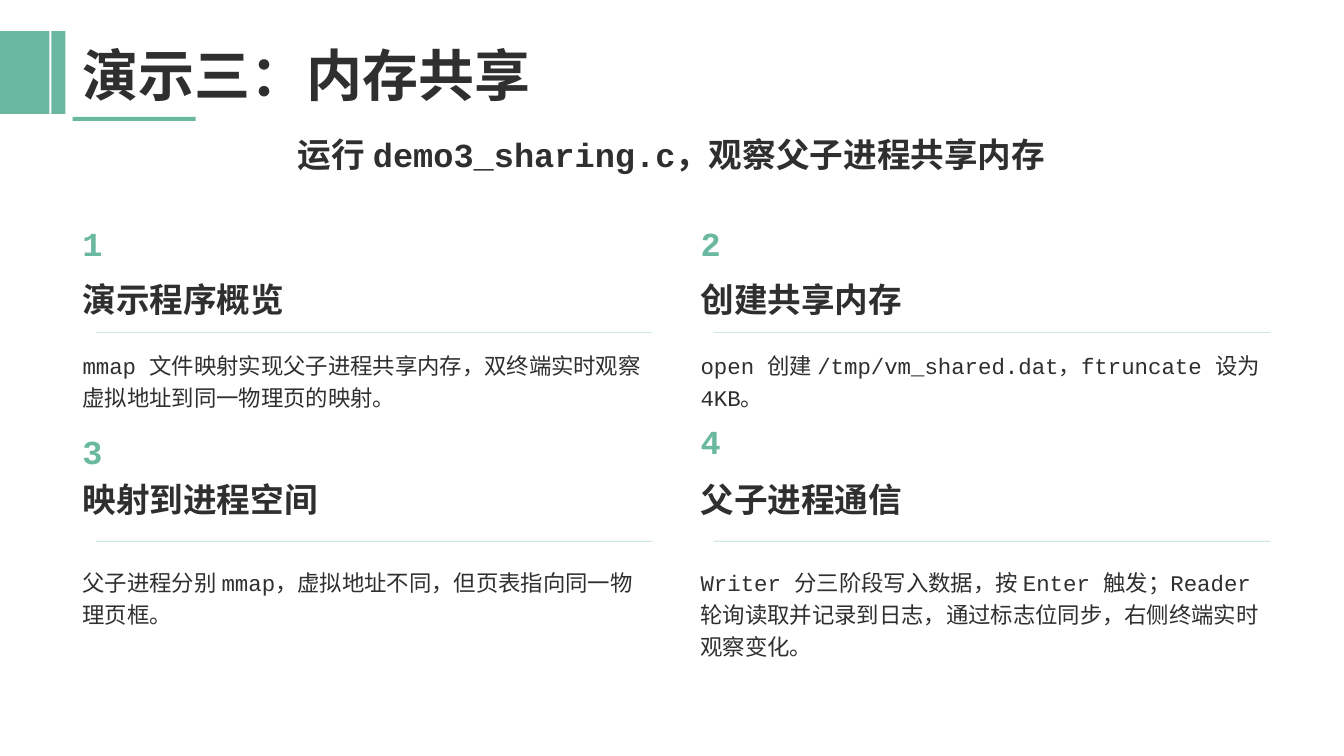
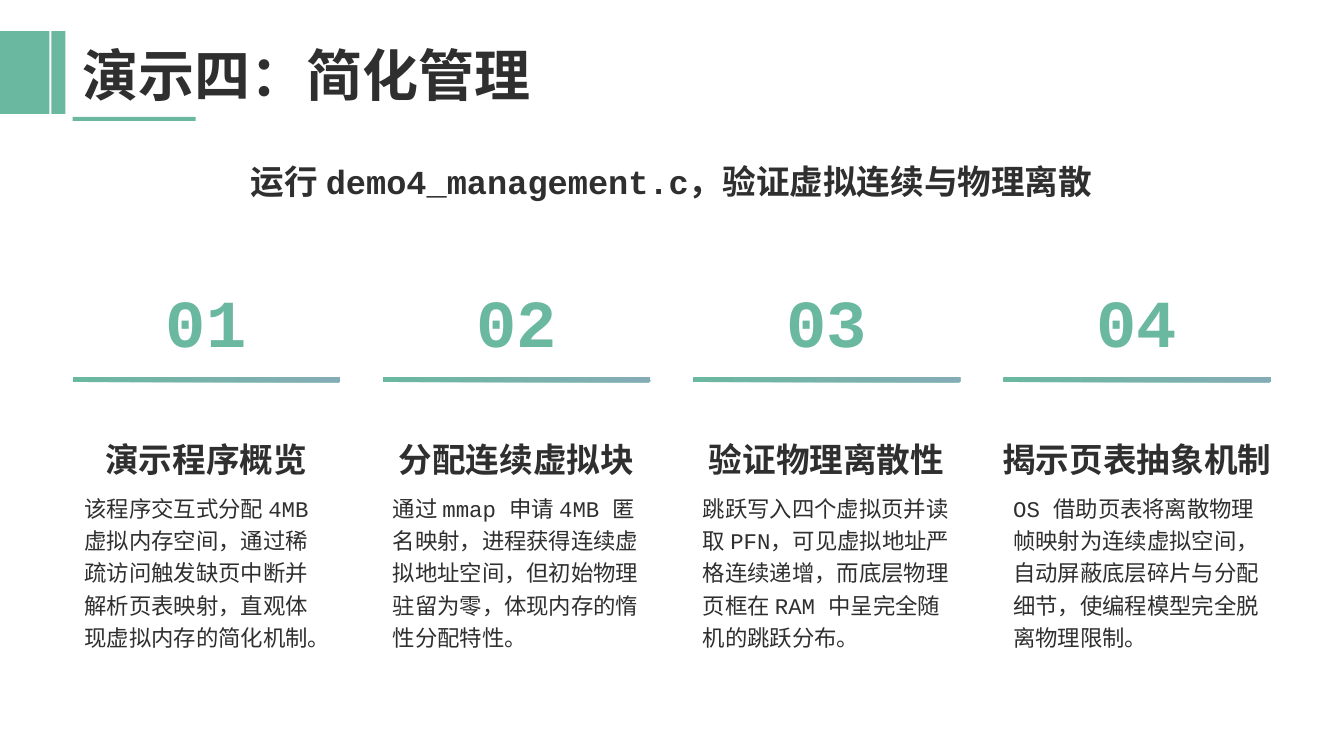
from lxml import etree
from pptx import Presentation
from pptx.dml.color import RGBColor
from pptx.enum.lang import MSO_LANGUAGE_ID
from pptx.enum.shapes import MSO_CONNECTOR, MSO_SHAPE
from pptx.enum.text import MSO_ANCHOR, MSO_AUTO_SIZE, PP_ALIGN
from pptx.oxml.ns import qn
from pptx.util import Inches, Pt

COLORS = {"green": "6BB8A0", "blue": "84ACB6", "ink": "2F2F2F"}
FONT = "Courier New"
MARGIN, CONTENT_WIDTH = 0.72, 11.88

ACCENTS = [  # left, top, width, height
    (MARGIN, 1.16, 1.22, 0.04),
    (0, 0.31, 0.49, 0.82),
    (0.51, 0.31, 0.14, 0.82),
]

SHARING = {
    "title": "演示三：内存共享",
    "subtitle": "运行 demo3_sharing.c，观察父子进程共享内存",
    "subtitle_height": 0.57,
    "rows": [
        {
            "heading_top": 2.67, "rule_top": 3.3, "body_top": 3.39,
            "steps": [  # number, number top, heading, body
                ("1", 2.09, "演示程序概览",
                 "mmap 文件映射实现父子进程共享内存，双终端实时观察虚拟地址到同一物理页的映射。"),
                ("2", 2.09, "创建共享内存",
                 "open 创建 /tmp/vm_shared.dat，ftruncate 设为 4KB。"),
            ],
        },
        {
            "heading_top": 4.65, "rule_top": 5.37, "body_top": 5.54,
            "steps": [
                ("3", 4.15, "映射到进程空间",
                 "父子进程分别 mmap，虚拟地址不同，但页表指向同一物理页框。"),
                ("4", 4.06, "父子进程通信",
                 "Writer 分三阶段写入数据，按 Enter 触发；Reader 轮询读取并记录到日志，"
                 "通过标志位同步，右侧终端实时观察变化。"),
            ],
        },
    ],
}

MANAGEMENT = {
    "title": "演示四：简化管理",
    "subtitle": "运行 demo4_management.c，验证虚拟连续与物理离散",
    "subtitle_height": 1.12,
    "steps": [  # heading, body indent, body
        ("演示程序概览", 0.02,
         "该程序交互式分配 4MB 虚拟内存空间，通过稀疏访问触发缺页中断并解析页表映射，"
         "直观体现虚拟内存的简化机制。"),
        ("分配连续虚拟块", 0,
         "通过 mmap 申请 4MB 匿名映射，进程获得连续虚拟地址空间，但初始物理驻留为零，"
         "体现内存的惰性分配特性。"),
        ("验证物理离散性", 0,
         "跳跃写入四个虚拟页并读取 PFN，可见虚拟地址严格连续递增，"
         "而底层物理页框在 RAM 中呈完全随机的跳跃分布。"),
        ("揭示页表抽象机制", 0,
         "OS 借助页表将离散物理帧映射为连续虚拟空间，自动屏蔽底层碎片与分配细节，"
         "使编程模型完全脱离物理限制。"),
    ],
}


def rgb(name):
    return RGBColor.from_string(COLORS[name])


def paint_gradient(fill):
    fill.gradient()
    fill.gradient_angle = 315
    for stop, name in zip(fill.gradient_stops, ("green", "blue")):
        stop.color.rgb = rgb(name)


def write(shape, text, size, color="ink", bold=True, align=PP_ALIGN.LEFT,
          anchor=MSO_ANCHOR.BOTTOM, spacing=1.0):
    frame = shape.text_frame
    frame.text = text
    frame.word_wrap = True
    frame.auto_size = MSO_AUTO_SIZE.NONE
    frame.vertical_anchor = anchor
    paragraph = frame.paragraphs[0]
    paragraph.alignment = align
    paragraph.line_spacing = spacing
    font = paragraph.font
    font.name, font.size, font.bold = FONT, Pt(size), bold
    font.language_id = MSO_LANGUAGE_ID.SIMPLIFIED_CHINESE
    if color == "gradient":
        paint_gradient(font.fill)
    else:
        font.color.rgb = rgb(color)


def add_text(slide, left, top, width, height, text, size, **style):
    box = slide.shapes.add_textbox(*map(Inches, (left, top, width, height)))
    write(box, text, size, **style)


def add_body(slide, left, top, width, height, text):
    add_text(slide, left, top, width, height, text, 16, bold=False,
             anchor=MSO_ANCHOR.TOP, spacing=1.2)


def add_bar(slide, preset, left, top, width, height):
    bar = slide.shapes.add_shape(preset, *map(Inches, (left, top, width, height)))
    bar.shadow.inherit = False
    bar.line.fill.background()
    return bar


def add_rule(slide, left, right, top):
    rule = slide.shapes.add_connector(
        MSO_CONNECTOR.STRAIGHT, *map(Inches, (left, top, right, top)))
    rule.line.width = Pt(0.5)
    rule.line.color.rgb = rgb("green")
    properties = rule.element.spPr
    color = properties.find(".//" + qn("a:srgbClr"))
    etree.SubElement(color, qn("a:alpha"), val="50000")
    etree.SubElement(properties, qn("a:effectLst"))


def add_accents(slide):
    """Draw the title accents and hand them to the layout, so every slide shows them."""
    for place in ACCENTS:
        accent = add_bar(slide, MSO_SHAPE.RECTANGLE, *place)
        accent.fill.solid()
        accent.fill.fore_color.rgb = rgb("green")
        slide.slide_layout.shapes.element.append(accent.element)


def start_slide(deck, content):
    slide = deck.slides.add_slide(deck.slide_layouts[5])
    title = slide.shapes.title
    title.left, title.top, title.width, title.height = map(
        Inches, (MARGIN, 0.14, CONTENT_WIDTH, 0.98))
    write(title, content["title"], 40)
    add_text(slide, MARGIN, 1.24, CONTENT_WIDTH, content["subtitle_height"],
             content["subtitle"], 24, align=PP_ALIGN.CENTER, anchor=MSO_ANCHOR.MIDDLE)
    return slide


def column_lefts(count, width):
    step = (CONTENT_WIDTH - width) / (count - 1)
    return [MARGIN + i * step for i in range(count)]


def build_sharing(deck):
    slide = start_slide(deck, SHARING)
    add_accents(slide)
    width = 5.75
    for row in SHARING["rows"]:
        for left, step in zip(column_lefts(2, width), row["steps"]):
            number, number_top, heading, body = step
            add_text(slide, left, number_top, 2.44, 0.57, number, 24,
                     color="green", spacing=1.08)
            add_text(slide, left, row["heading_top"], width, 0.55, heading, 24,
                     spacing=1.2)
            add_rule(slide, left + 0.23, left + width, row["rule_top"])
            add_body(slide, left, row["body_top"], width, 0.92, body)


def build_management(deck):
    slide = start_slide(deck, MANAGEMENT)
    width, overhang = 2.65, 0.15
    steps = MANAGEMENT["steps"]
    lefts = column_lefts(len(steps), width)
    for number, (left, step) in enumerate(zip(lefts, steps), 1):
        heading, indent, body = step
        add_text(slide, left, 2.5, width, 1.13, f"{number:02}", 48,
                 color="gradient", align=PP_ALIGN.CENTER)
        bar = add_bar(slide, MSO_SHAPE.ROUNDED_RECTANGLE, left, 3.74, width, 0.05)
        paint_gradient(bar.fill)
        add_text(slide, left - overhang, 3.93, width + 2 * overhang, 0.87, heading, 24,
                 align=PP_ALIGN.CENTER)
        add_body(slide, left + indent, 4.81, width - indent, 1.87, body)


def main():
    deck = Presentation()
    deck.slide_width, deck.slide_height = Inches(13.33), Inches(7.5)
    build_sharing(deck)
    build_management(deck)
    deck.save("out.pptx")


if __name__ == "__main__":
    main()
